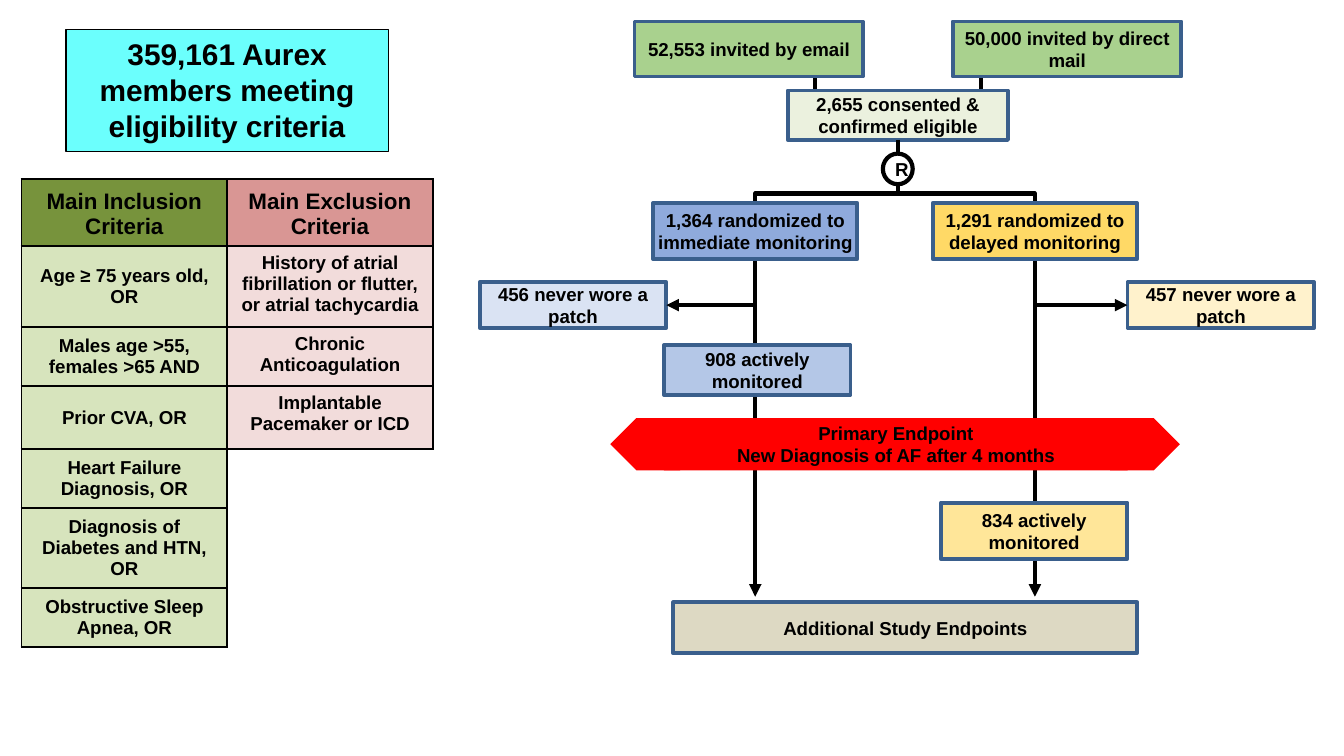
from dataclasses import dataclass
from typing import Optional

import lxml.etree
import pptx
import pptx.dml.color
import pptx.enum.shapes
import pptx.enum.text
import pptx.oxml.ns
import pptx.util

Pt = pptx.util.Pt
qn = pptx.oxml.ns.qn
SHAPE = pptx.enum.shapes.MSO_SHAPE
ANCHOR = pptx.enum.text.MSO_ANCHOR
CENTER = pptx.enum.text.PP_ALIGN.CENTER

BLACK, WHITE, OUTLINE, RED = "000000", "FFFFFF", "3A5F8C", "FF0000"
IMMEDIATE_X, DELAYED_X = 404.6, 554.4
FRAME_TOP = 103.7
BANNER_TOP, BANNER_HEIGHT = 224, 28
TIGHT = dict(margin_left=0, margin_right=0, margin_top=0, margin_bottom=0)


@dataclass
class Box:
    left: float
    top: float
    width: float
    height: float
    fill: str
    text: str = ""
    line: Optional[str] = OUTLINE
    weight: float = 2
    kind: int = SHAPE.RECTANGLE
    size: float = 10
    tight: bool = True
    anchor: int = ANCHOR.MIDDLE
    rotation: float = 0


@dataclass
class Link:
    start: tuple[float, float]
    end: tuple[float, float]
    weight: float = 2.25
    arrow: bool = True


def color(value: str) -> pptx.dml.color.RGBColor:
    return pptx.dml.color.RGBColor.from_string(value)


def paint(fill, value: str) -> None:
    fill.solid()
    fill.fore_color.rgb = color(value)


def assign(target, values: dict) -> None:
    for name, value in values.items():
        setattr(target, name, value)


def write(frame, text: str, size: float) -> None:
    frame.text = text
    for paragraph in frame.paragraphs:
        paragraph.alignment = CENTER
        assign(paragraph.font, dict(name="Arial", size=Pt(size), bold=True))
        paragraph.font.color.rgb = color(BLACK)


def draw_box(shapes, box: Box):
    shape = shapes.add_shape(box.kind, Pt(box.left), Pt(box.top), Pt(box.width), Pt(box.height))
    shape.shadow.inherit = False
    shape.rotation = box.rotation
    paint(shape.fill, box.fill)
    if box.line:
        paint(shape.line.fill, box.line)
        shape.line.width = Pt(box.weight)
    else:
        shape.line.fill.background()
    if box.text:
        settings = dict(word_wrap=True, vertical_anchor=box.anchor)
        assign(shape.text_frame, settings | (TIGHT if box.tight else {}))
        write(shape.text_frame, box.text, box.size)
    return shape


def draw_link(shapes, link: Link):
    connector = shapes.add_connector(
        pptx.enum.shapes.MSO_CONNECTOR.STRAIGHT, *map(Pt, link.start + link.end)
    )
    paint(connector.line.fill, BLACK)
    connector.line.width = Pt(link.weight)
    if link.arrow:
        lxml.etree.SubElement(connector.line._get_or_add_ln(), qn("a:tailEnd"), type="triangle")
    lxml.etree.SubElement(connector._element.spPr, qn("a:effectLst"))
    return connector


def set_borders(cell, visible: str) -> None:
    properties = cell._tc.get_or_add_tcPr()
    for side in "LRTB":
        border = lxml.etree.SubElement(properties, qn(f"a:ln{side}"), w=str(Pt(1)))
        if side in visible:
            fill = lxml.etree.SubElement(border, qn("a:solidFill"))
            lxml.etree.SubElement(fill, qn("a:srgbClr"), val=BLACK)
        else:
            lxml.etree.SubElement(border, qn("a:noFill"))


def draw_criteria(shapes) -> None:
    inclusion = [
        "Main Inclusion Criteria",
        "Age ≥ 75 years old, OR",
        "Males age >55, females >65 AND",
        "Prior CVA, OR",
        "Heart Failure Diagnosis, OR",
        "Diagnosis of Diabetes and HTN, OR",
        "Obstructive Sleep Apnea, OR",
    ]
    exclusion = [
        "Main Exclusion Criteria",
        "History of atrial fibrillation or flutter, or atrial tachycardia",
        "Chronic Anticoagulation",
        "Implantable Pacemaker or ICD",
    ]
    heights = [36, 43.5, 31.6, 33.8, 31.6, 42.9, 31.6]
    columns = [
        (inclusion, "77933C", "D7E4BD", ANCHOR.MIDDLE),
        (exclusion, "D99694", "F2DCDB", ANCHOR.TOP),
    ]
    table = shapes.add_table(
        len(heights), len(columns), Pt(11.5), Pt(95.8), Pt(220.4), Pt(sum(heights))
    ).table
    assign(table, dict(first_row=False, horz_banding=False))
    for row, height in zip(table.rows, heights):
        row.height = Pt(height)
    for column, (criteria, header_fill, body_fill, body_anchor) in enumerate(columns):
        for row in range(len(heights)):
            cell = table.cell(row, column)
            if row < len(criteria):
                set_borders(cell, "LRTB")
                paint(cell.fill, body_fill if row else header_fill)
                cell.vertical_anchor = body_anchor if row else ANCHOR.BOTTOM
                write(cell.text_frame, criteria[row], 10 if row else 12)
            else:
                set_borders(cell, "LT" if row == len(criteria) else "L")
                cell.fill.background()
    table.cell(len(exclusion), 1).merge(table.cell(len(heights) - 1, 1))


def draw_endpoint_banner(shapes) -> None:
    banner = shapes.add_group_shape().shapes
    text = "Primary Endpoint\nNew Diagnosis of AF after 4 months"
    for left, width, kind, rotation, label in [
        (594.7, 37.4, SHAPE.PENTAGON, 0, ""),
        (355.7, 248.4, SHAPE.RECTANGLE, 0, text),
        (326.9, 37.4, SHAPE.PENTAGON, 180, ""),
    ]:
        draw_box(banner, Box(left, BANNER_TOP, width, BANNER_HEIGHT, RED, label,
                             line=None, kind=kind, rotation=rotation))


def draw_flow(shapes) -> None:
    for x in (436.5, 525.5):
        draw_link(shapes, Link((x, 41), (x, 48.5), weight=2, arrow=False))
    draw_box(shapes, Box(IMMEDIATE_X, FRAME_TOP, DELAYED_X - IMMEDIATE_X, 131, WHITE,
                         line=BLACK, weight=2.25))
    for x in (IMMEDIATE_X, DELAYED_X):
        draw_link(shapes, Link((x, 240), (x, 319.7)))

    for box in [
        Box(340, 11.5, 122.4, 29.5, "A9D18E", "52,553 invited by email"),
        Box(510.5, 11.5, 122.4, 29.5, "A9D18E", "50,000 invited by direct mail"),
        Box(349.9, 108.7, 109.4, 30.2, "8FAADC", "1,364 randomized to immediate monitoring"),
        Box(499.7, 108.7, 109.4, 30.2, "FFD966", "1,291 randomized to delayed monitoring"),
        Box(355.7, 185, 100, 26.6, "B4C7E7", "908 actively monitored"),
        Box(504, 269.3, 100, 30.2, "FFE699", "834 actively monitored"),
        Box(360.7, 322.6, 248.4, 27.4, "DDD9C3", "Additional Study Endpoints"),
    ]:
        draw_box(shapes, box)

    for box, start_x, side in [
        (Box(257, 151.2, 100, 24.5, "DAE3F3", "456 never wore a patch"), IMMEDIATE_X, 3),
        (Box(604, 151.2, 100, 24.5, "FFF2CC", "457 never wore a patch"), DELAYED_X, 1),
    ]:
        dropout = draw_box(shapes, box)
        middle = box.top + box.height / 2
        draw_link(shapes, Link((start_x, middle), (box.left, middle))).end_connect(dropout, side)

    consented = draw_box(shapes, Box(422, 48.5, 118, 26.5, "EBF1DE",
                                     "2,655 consented & confirmed eligible"))
    randomizing = draw_link(shapes, Link((481, 75), (481, FRAME_TOP), weight=2, arrow=False))
    randomizing.begin_connect(consented, 2)
    draw_box(shapes, Box(473, 82.3, 16, 16.4, WHITE, "R", line=BLACK, weight=2.25,
                         kind=SHAPE.OVAL, tight=False))


def main() -> None:
    deck = pptx.Presentation()
    assign(deck, dict(slide_width=Pt(720), slide_height=Pt(405)))
    shapes = deck.slides.add_slide(deck.slide_layouts[6]).shapes
    draw_box(shapes, Box(35.3, 15.8, 172.8, 65.5, "6BFFFD",
                         "359,161 Aurex members meeting eligibility criteria",
                         line=BLACK, weight=0.75, size=16, tight=False, anchor=ANCHOR.TOP))
    draw_flow(shapes)
    draw_criteria(shapes)
    draw_endpoint_banner(shapes)
    deck.save("out.pptx")


if __name__ == "__main__":
    main()
